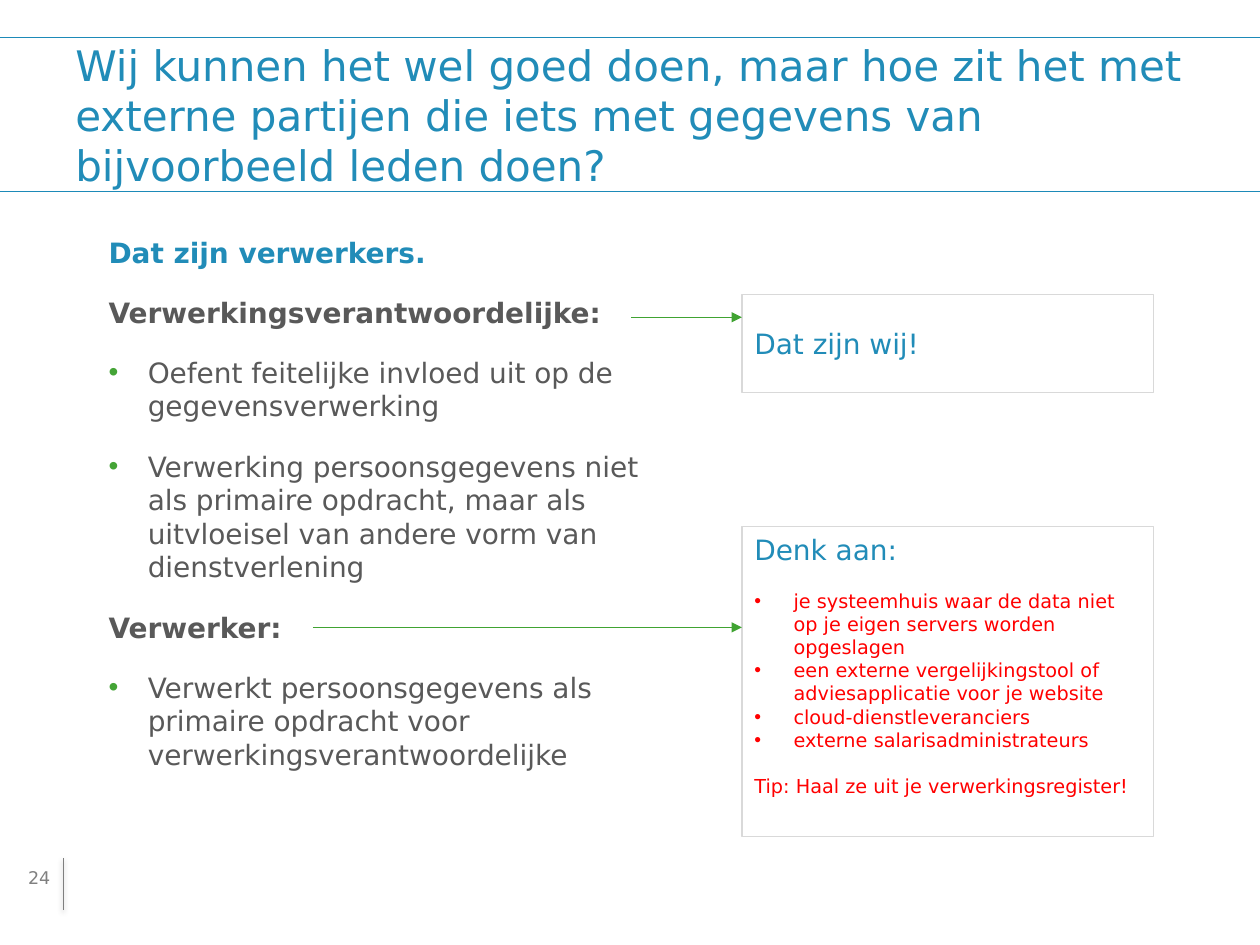
from dataclasses import dataclass

from lxml import etree
from pptx import Presentation
from pptx.dml.color import RGBColor
from pptx.enum.shapes import MSO_CONNECTOR, MSO_SHAPE
from pptx.enum.text import MSO_ANCHOR, PP_ALIGN
from pptx.oxml.ns import qn
from pptx.slide import Slide
from pptx.util import Pt

STRAIGHT = MSO_CONNECTOR.STRAIGHT
RECTANGLE = MSO_SHAPE.RECTANGLE
TOP = MSO_ANCHOR.TOP
MIDDLE = MSO_ANCHOR.MIDDLE
LEFT = PP_ALIGN.LEFT

BLUE = RGBColor(0x21, 0x8C, 0xB8)
RULE_BLUE = RGBColor(0x1D, 0x8A, 0xB8)
GREEN = RGBColor(0x40, 0xA3, 0x32)
BULLET_GREEN = RGBColor(0x44, 0xA4, 0x36)
DARK_GRAY = RGBColor(0x59, 0x59, 0x59)
GRAY = RGBColor(0x80, 0x80, 0x80)
RULE_GRAY = RGBColor(0x7F, 0x7F, 0x7F)
LIGHT_GRAY = RGBColor(0xD9, 0xD9, 0xD9)
WHITE = RGBColor(0xFF, 0xFF, 0xFF)
RED = RGBColor(0xFF, 0x00, 0x00)

WIDTH, HEIGHT = 720, 540
HEADER_TOP, HEADER_BOTTOM = 21.6, 109.4
CALLOUT_LEFT, CALLOUT_WIDTH = 424, 235
HANGING = 22.4
BODY_INDENT = 12.5


def add_child(parent, tag, **attributes):
    return etree.SubElement(parent, qn(tag), attributes)


def write_text(frame, text, first=False, size=16, color=BLUE, bold=False,
               font="DejaVu Sans", before=0, after=0, margin=0,
               bullet=False, bullet_color=None):
    paragraph = frame.paragraphs[0] if first else frame.add_paragraph()
    paragraph.alignment = LEFT
    paragraph.space_before = Pt(0 if first else before)
    paragraph.space_after = Pt(after)
    properties = paragraph._p.get_or_add_pPr()
    hanging = HANGING if bullet else 0
    properties.set("marL", str(Pt(margin + hanging)))
    properties.set("indent", str(Pt(-hanging)))
    if bullet:
        if bullet_color is not None:
            add_child(add_child(properties, "a:buClr"), "a:srgbClr",
                      val=str(bullet_color))
        add_child(properties, "a:buFont", typeface="Arial")
        add_child(properties, "a:buChar", char="•")
    run = paragraph.add_run()
    run.text = text
    run.font.name = font
    run.font.size = Pt(size)
    run.font.bold = bold
    run.font.color.rgb = color


@dataclass
class SlideBuilder:
    slide: Slide
    line_width: float = 0.75
    side_inset: float = 7.2
    end_inset: float = 3.6

    def prepare_frame(self, shape, anchor):
        frame = shape.text_frame
        frame.word_wrap = True
        frame.vertical_anchor = anchor
        frame.margin_left = frame.margin_right = Pt(self.side_inset)
        frame.margin_top = frame.margin_bottom = Pt(self.end_inset)
        return frame

    def text_box(self, left, top, width, height, anchor=TOP):
        shape = self.slide.shapes.add_textbox(
            Pt(left), Pt(top), Pt(width), Pt(height))
        return self.prepare_frame(shape, anchor)

    def rectangle(self, left, top, width, height, color, anchor=MIDDLE):
        shape = self.slide.shapes.add_shape(
            RECTANGLE, Pt(left), Pt(top), Pt(width), Pt(height))
        shape.shadow.inherit = False
        shape.fill.background()
        shape.line.color.rgb = color
        shape.line.width = Pt(self.line_width)
        return self.prepare_frame(shape, anchor)

    def line(self, start, end, color, width=None, arrow=False, shadow=False):
        connector = self.slide.shapes.add_connector(
            STRAIGHT, *(Pt(value) for value in (*start, *end)))
        connector.line.color.rgb = color
        connector.line.width = Pt(width or self.line_width)
        if arrow:
            add_child(connector.line._get_or_add_ln(), "a:tailEnd",
                      type="triangle")
        effects = add_child(connector._element.spPr, "a:effectLst")
        if shadow:
            outer = add_child(effects, "a:outerShdw", blurRad=str(Pt(3.1)),
                              dist=str(Pt(1.6)), dir="5400000",
                              rotWithShape="0")
            black = add_child(outer, "a:srgbClr", val="000000")
            add_child(black, "a:alpha", val="38000")


def main():
    presentation = Presentation()
    presentation.slide_width = Pt(WIDTH)
    presentation.slide_height = Pt(HEIGHT)
    slide = presentation.slides.add_slide(presentation.slide_layouts[6])
    builder = SlideBuilder(slide)

    builder.line((36, 490.3), (36, 519.8), RULE_GRAY, width=0.5, shadow=True)
    for height in (HEADER_TOP, HEADER_BOTTOM):
        builder.line((0, height), (WIDTH, height), RULE_BLUE)

    title = builder.text_box(36, HEADER_TOP, 648, HEADER_BOTTOM - HEADER_TOP,
                             anchor=MIDDLE)
    write_text(title, "Wij kunnen het wel goed doen, maar hoe zit het met "
               "externe partijen die iets met gegevens van bijvoorbeeld "
               "leden doen?", first=True, size=24)

    page_number = builder.text_box(9, 492, 88.5, 29.5)
    write_text(page_number, "24", first=True, size=10, color=GRAY)

    body = builder.rectangle(42.5, 113, 344, 349, WHITE)
    body_format = {"before": 3.2, "after": 12, "margin": BODY_INDENT}
    heading = {"color": DARK_GRAY, "bold": True, **body_format}
    item = {"color": DARK_GRAY, "bullet": True,
            "bullet_color": BULLET_GREEN, **body_format}
    write_text(body, "Dat zijn verwerkers.", first=True, bold=True,
               **body_format)
    for text, style in (
        ("Verwerkingsverantwoordelijke:", heading),
        ("Oefent feitelijke invloed uit op de gegevensverwerking", item),
        ("Verwerking persoonsgegevens niet als primaire opdracht, maar als "
         "uitvloeisel van andere vorm van dienstverlening", item),
        ("Verwerker:", heading),
        ("Verwerkt persoonsgegevens als primaire opdracht voor "
         "verwerkingsverantwoordelijke", item),
    ):
        write_text(body, text, **style)

    examples = builder.rectangle(CALLOUT_LEFT, 301, CALLOUT_WIDTH, 177,
                                 LIGHT_GRAY, anchor=TOP)
    write_text(examples, "Denk aan:", first=True, after=13)
    for text in (
        "je systeemhuis waar de data niet op je eigen servers worden "
        "opgeslagen",
        "een externe vergelijkingstool of adviesapplicatie voor je website",
        "cloud-dienstleveranciers",
        "externe salarisadministrateurs",
    ):
        write_text(examples, text, size=11, color=RED, bullet=True)
    write_text(examples, "Tip: Haal ze uit je verwerkingsregister!",
               size=11, color=RED, before=13)

    controller = builder.rectangle(CALLOUT_LEFT, 168.3, CALLOUT_WIDTH, 56,
                                   LIGHT_GRAY)
    write_text(controller, "Dat zijn wij!", first=True)

    for left, height in ((178.8, 358.5), (360.6, 181.3)):
        builder.line((left, height), (CALLOUT_LEFT, height), GREEN, arrow=True)

    presentation.save("out.pptx")


if __name__ == "__main__":
    main()
